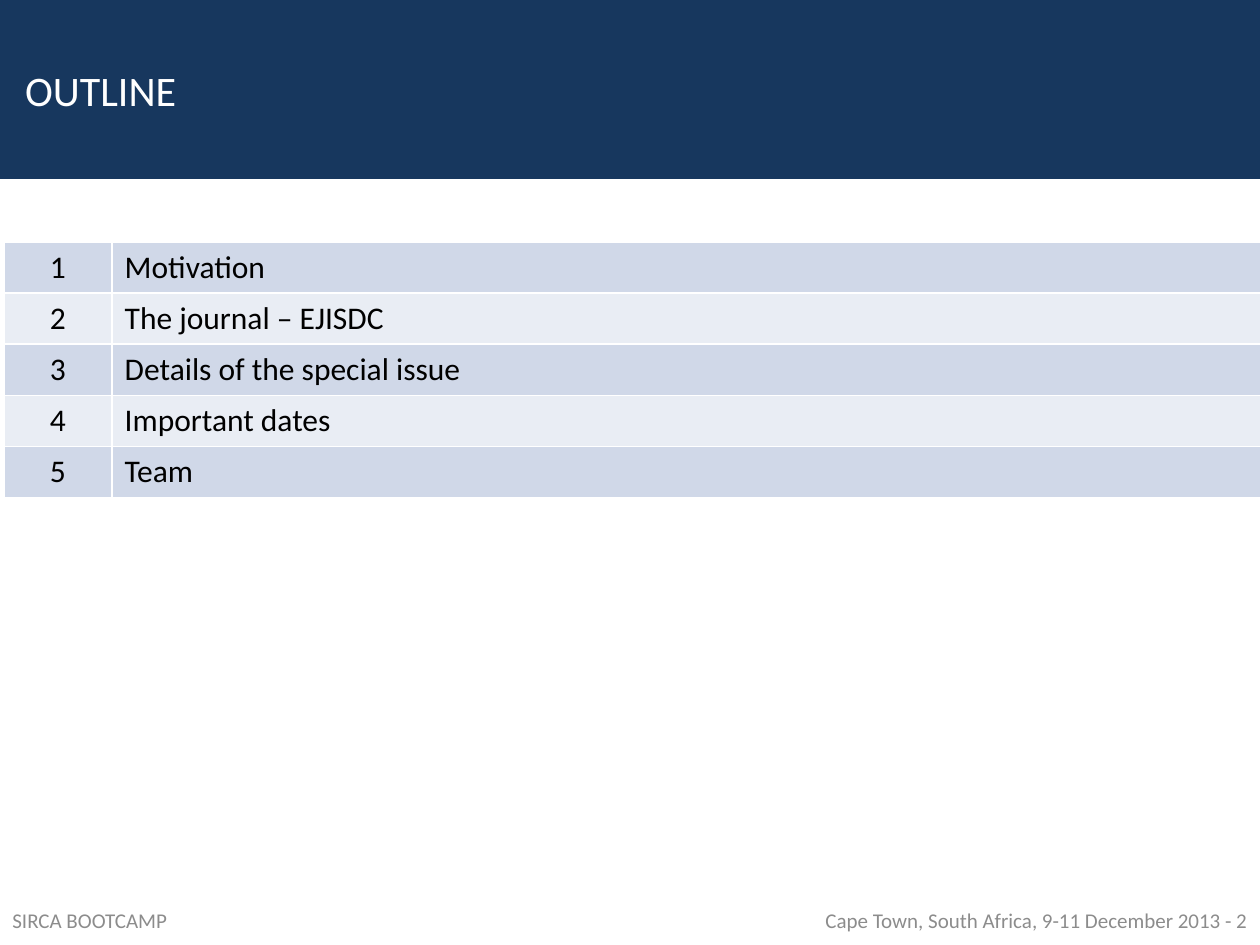
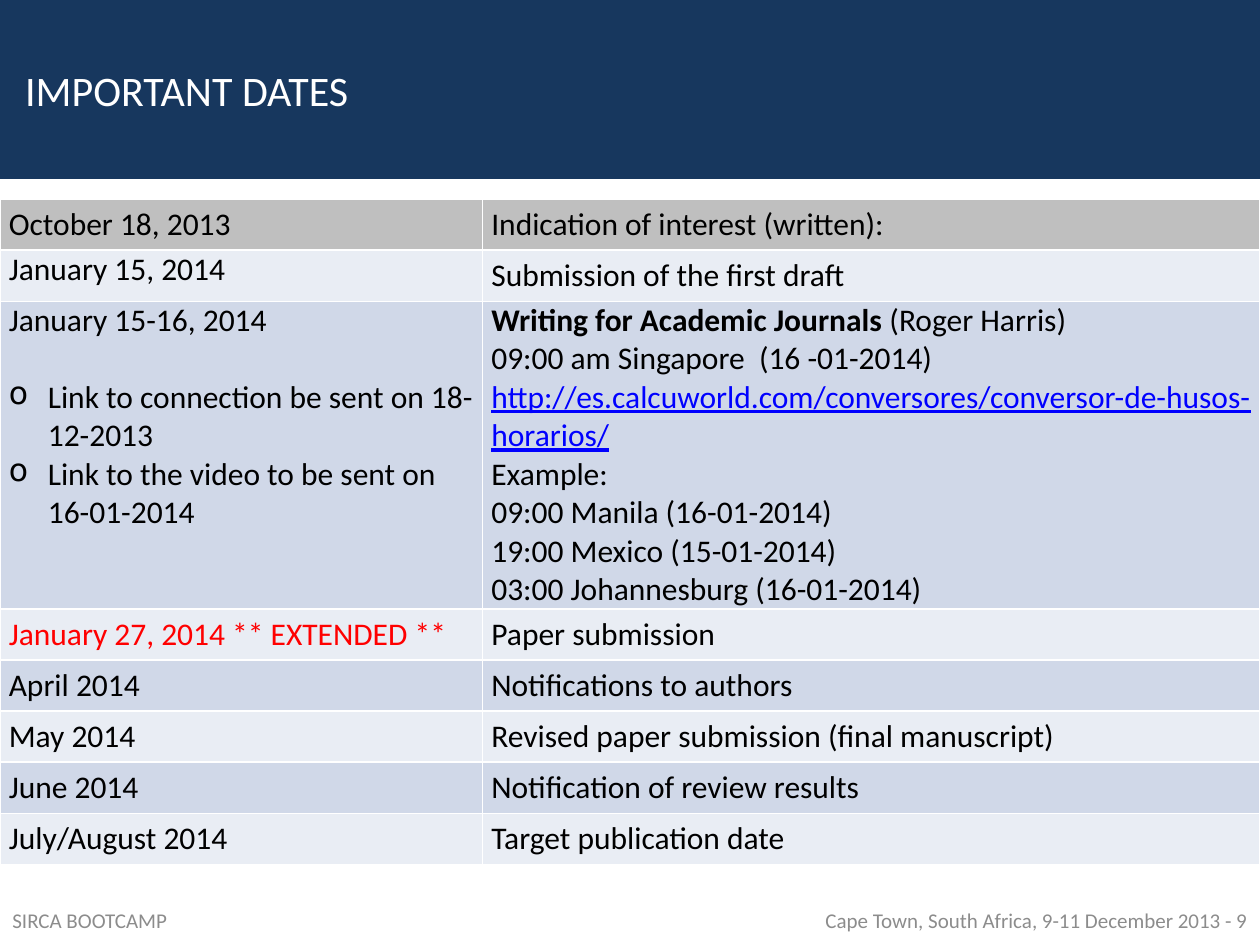
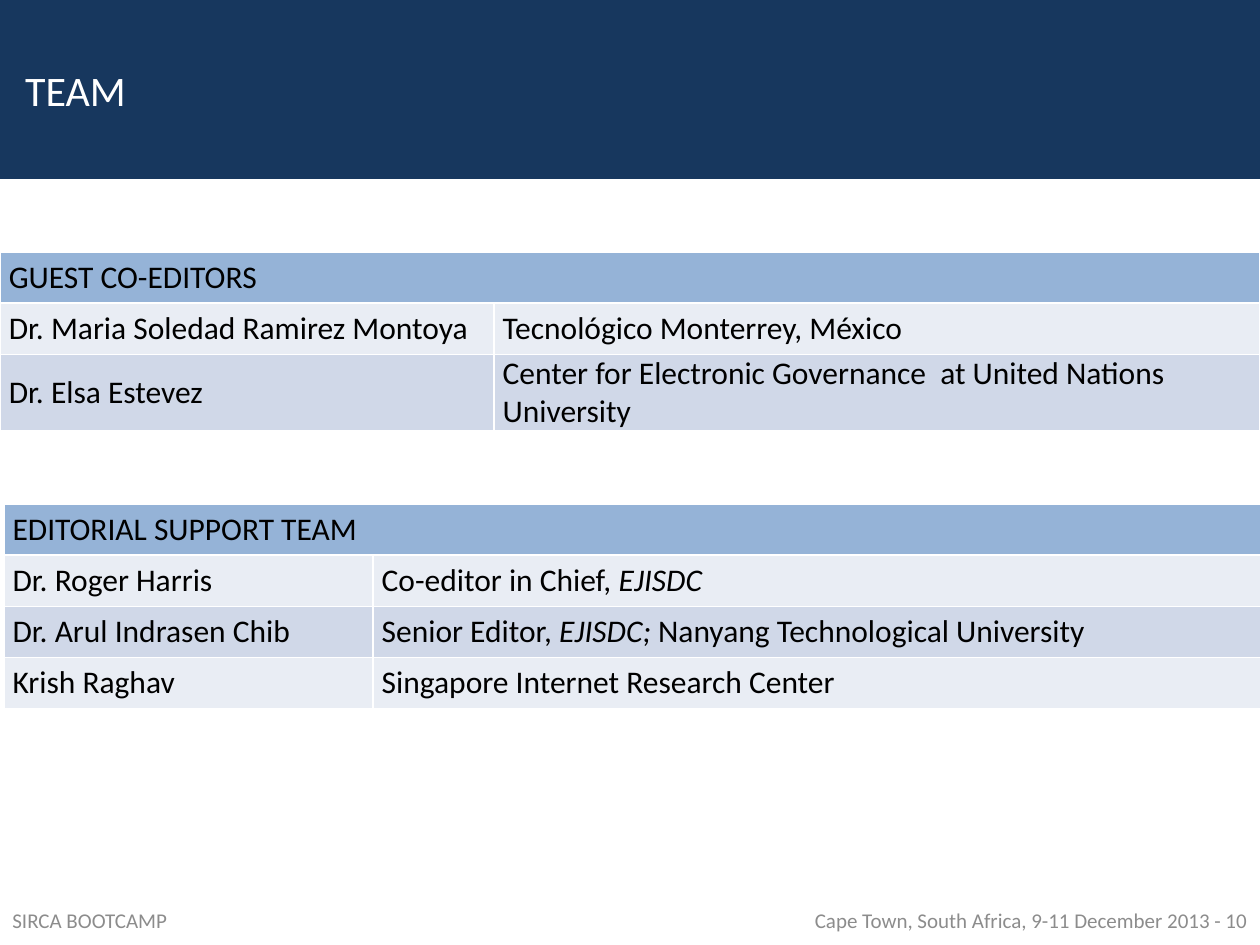
from dataclasses import dataclass
from typing import Optional, Union

from lxml.etree import SubElement
from pptx import Presentation
from pptx.dml.color import RGBColor
from pptx.enum.shapes import MSO_SHAPE
from pptx.enum.text import MSO_ANCHOR, PP_ALIGN
from pptx.oxml.ns import qn
from pptx.util import Emu, Inches, Pt

# The page is a grid of 100 columns by 75 rows; every length counts grid units
UNIT = Inches(0.1)
COLUMNS, ROWS = 100, 75
ROW_HEIGHT = 4.06
FONT = "Calibri"
COLORS = {
    "navy": "17375E",
    "white": "FFFFFF",
    "black": "000000",
    "footer": "8C8C8C",
    "dark band": "D0D8E8",
    "light band": "E9EDF4",
    "gray header": "BFBFBF",
    "blue header": "95B3D7",
    "link": "0000FF",
    "alert": "FF0000",
}


@dataclass(frozen=True)
class Span:
    text: str
    bold: Optional[bool] = None
    italic: Optional[bool] = None
    underline: Optional[bool] = None
    color: Optional[str] = None


@dataclass(frozen=True)
class Para:
    spans: tuple[Span, ...]
    bullet: bool = False
    space_before: float = 0


@dataclass(frozen=True)
class CellText:
    paras: tuple[Para, ...]
    anchor: MSO_ANCHOR = MSO_ANCHOR.MIDDLE


@dataclass(frozen=True)
class TableSpec:
    left: float
    top: float
    first_column: float
    rows: tuple[tuple[Union[str, CellText], ...], ...]  # a single entry spans the row
    header: str = "dark band"
    tall_rows: tuple[tuple[int, float], ...] = ()
    numbered: bool = False


@dataclass(frozen=True)
class PageSpec:
    title: str
    number: int
    tables: tuple[TableSpec, ...]


def grid(units: float) -> Emu:
    return Emu(round(units * UNIT))


def rgb(name: str) -> RGBColor:
    return RGBColor.from_string(COLORS[name])


def line(*spans: Span) -> CellText:
    return CellText((Para(spans),))


def set_font(font, size: float, color: str) -> None:
    font.name = FONT
    font.size = Pt(size)
    font.color.rgb = rgb(color)


# Text
def write_label(frame, text: str, size: float, color: str, align=PP_ALIGN.LEFT) -> None:
    frame.word_wrap = True
    frame.vertical_anchor = MSO_ANCHOR.MIDDLE
    para = frame.paragraphs[0]
    para.text = text
    para.alignment = align
    set_font(para.font, size, color)


def write_para(para, content: Para) -> None:
    if content.bullet:
        properties = para._p.get_or_add_pPr()
        properties.set("marL", str(Inches(0.31)))
        properties.set("indent", str(-Inches(0.31)))
        SubElement(properties, qn("a:buChar")).set("char", "o")
    if content.space_before:
        para.space_before = Pt(content.space_before)
    set_font(para.font, 18, "black")
    for span in content.spans:
        run = para.add_run()
        run.text = span.text
        run.font.bold = span.bold
        run.font.italic = span.italic
        run.font.underline = span.underline
        if span.color:
            run.font.color.rgb = rgb(span.color)


# Tables
def add_borders(cell) -> None:
    properties = cell._tc.get_or_add_tcPr()
    for side in ("lnL", "lnR", "lnT", "lnB"):
        border = SubElement(properties, qn(f"a:{side}"), w=str(Pt(1)))
        fill = SubElement(border, qn("a:solidFill"))
        SubElement(fill, qn("a:srgbClr"), val=COLORS["white"])


def fill_cell(cell, content: Union[str, CellText], numbered: bool) -> None:
    if isinstance(content, str):
        content = line(Span(content))
    if numbered:
        cell.vertical_anchor = MSO_ANCHOR.TOP
    else:
        cell.vertical_anchor = content.anchor
        cell.margin_left = cell.margin_right = Inches(0.07)
        cell.margin_top = cell.margin_bottom = 0
    frame = cell.text_frame
    for index, para in enumerate(content.paras):
        write_para(frame.add_paragraph() if index else frame.paragraphs[0], para)


def draw_table(page, spec: TableSpec) -> None:
    heights = [ROW_HEIGHT] * len(spec.rows)
    for index, height in spec.tall_rows:
        heights[index] = height
    table = page.shapes.add_table(
        len(heights), 2, grid(spec.left), grid(spec.top), grid(COLUMNS), grid(sum(heights))
    ).table
    table.first_row = table.horz_banding = False
    table.columns[0].width = grid(spec.first_column)
    table.columns[1].width = grid(COLUMNS - spec.first_column)
    for index, (height, contents) in enumerate(zip(heights, spec.rows)):
        table.rows[index].height = grid(height)
        band = "light band" if index % 2 else "dark band"
        for column in range(2):
            cell = table.cell(index, column)
            add_borders(cell)
            cell.fill.solid()
            cell.fill.fore_color.rgb = rgb(band if index else spec.header)
        if len(contents) == 1:
            table.cell(index, 0).merge(table.cell(index, 1))
        for column, content in enumerate(contents):
            fill_cell(table.cell(index, column), content, spec.numbered)
        if spec.numbered:
            table.cell(index, 0).text_frame.paragraphs[0].alignment = PP_ALIGN.CENTER


# Title band and footers shared by all pages
def draw_title(page, title: str) -> None:
    band = page.shapes.add_shape(MSO_SHAPE.RECTANGLE, 0, 0, grid(COLUMNS), grid(14.2))
    band.shadow.inherit = False
    band.fill.solid()
    band.fill.fore_color.rgb = rgb("navy")
    band.line.fill.background()
    band.text_frame.margin_left = Inches(0.2)
    write_label(band.text_frame, title, 24, "white")


def draw_footer(page, left: float, width: float, text: str, align: PP_ALIGN) -> None:
    box = page.shapes.add_textbox(grid(left), grid(ROWS - 4), grid(width), grid(4))
    write_label(box.text_frame, text, 12, "footer", align)


def draw_page(deck, spec: PageSpec) -> None:
    page = deck.slides.add_slide(deck.slide_layouts[6])
    draw_title(page, spec.title)
    for table in spec.tables:
        draw_table(page, table)
    draw_footer(page, 0, 23.3, "SIRCA BOOTCAMP", PP_ALIGN.LEFT)
    place = f"Cape Town, South Africa, 9-11 December 2013 - {spec.number}"
    draw_footer(page, 60.8, 39.2, place, PP_ALIGN.RIGHT)


# Contents
TOPICS = (
    "Motivation",
    "The journal – EJISDC",
    "Details of the special issue",
    "Important dates",
    "Team",
)
OUTLINE = TableSpec(
    0.3, 19.2, 8.6,
    tuple((str(number), topic) for number, topic in enumerate(TOPICS, 1)),
    numbered=True,
)

SEMINAR_DATE = CellText(
    (
        Para((Span("January 15-16, 2014"),)),
        Para((Span("Link to connection be sent on 18-12-2013"),), bullet=True, space_before=22),
        Para((Span("Link to the video to be sent on 16-01-2014"),), bullet=True),
    ),
    MSO_ANCHOR.TOP,
)
SEMINAR = CellText((
    Para((Span("Writing for Academic Journals ", bold=True), Span("(Roger Harris)"))),
    Para((Span("09:00 am Singapore  (16 -01-2014)"),)),
    Para((Span(
        "http://es.calcuworld.com/conversores/conversor-de-husos-horarios/",
        underline=True, color="link",
    ),)),
    Para((Span("Example:"),)),
    Para((Span("09:00 Manila (16-01-2014)"),)),
    Para((Span("19:00 Mexico (15-01-2014)"),)),
    Para((Span("03:00 Johannesburg (16-01-2014)"),)),
))
DATES = TableSpec(
    0, 15.8, 38.3,
    (
        ("October 18, 2013", "Indication of interest (written):"),
        (
            CellText((Para((Span("January 15, 2014"),)),), MSO_ANCHOR.TOP),
            "Submission of the first draft",
        ),
        (SEMINAR_DATE, SEMINAR),
        (line(Span("January 27, 2014 ** EXTENDED **", color="alert")), "Paper submission"),
        ("April 2014", "Notifications to authors"),
        ("May 2014", "Revised paper submission (final manuscript)"),
        ("June 2014", "Notification of review results"),
        ("July/August 2014", "Target publication date"),
    ),
    header="gray header",
    tall_rows=((2, 24.4),),
)

EDITORS = TableSpec(
    0, 20, 39.2,
    (
        ("GUEST CO-EDITORS",),
        ("Dr. Maria Soledad Ramirez Montoya", "Tecnológico Monterrey, México"),
        ("Dr. Elsa Estevez", "Center for Electronic Governance  at United Nations University"),
    ),
    header="blue header",
    tall_rows=((2, 6.1),),
)
SUPPORT = TableSpec(
    0.3, 40, 29.3,
    (
        ("EDITORIAL SUPPORT TEAM",),
        ("Dr. Roger Harris", line(Span("Co-editor in Chief, "), Span("EJISDC", italic=True))),
        (
            "Dr. Arul Indrasen Chib",
            line(
                Span("Senior Editor, "),
                Span("EJISDC; ", italic=True),
                Span("Nanyang Technological University"),
            ),
        ),
        ("Krish Raghav", "Singapore Internet Research Center"),
    ),
    header="blue header",
)

PAGES = (
    PageSpec("OUTLINE", 2, (OUTLINE,)),
    PageSpec("IMPORTANT DATES", 9, (DATES,)),
    PageSpec("TEAM", 10, (EDITORS, SUPPORT)),
)


def main() -> None:
    deck = Presentation()
    deck.slide_width, deck.slide_height = grid(COLUMNS), grid(ROWS)
    for spec in PAGES:
        draw_page(deck, spec)
    deck.save("out.pptx")


if __name__ == "__main__":
    main()
